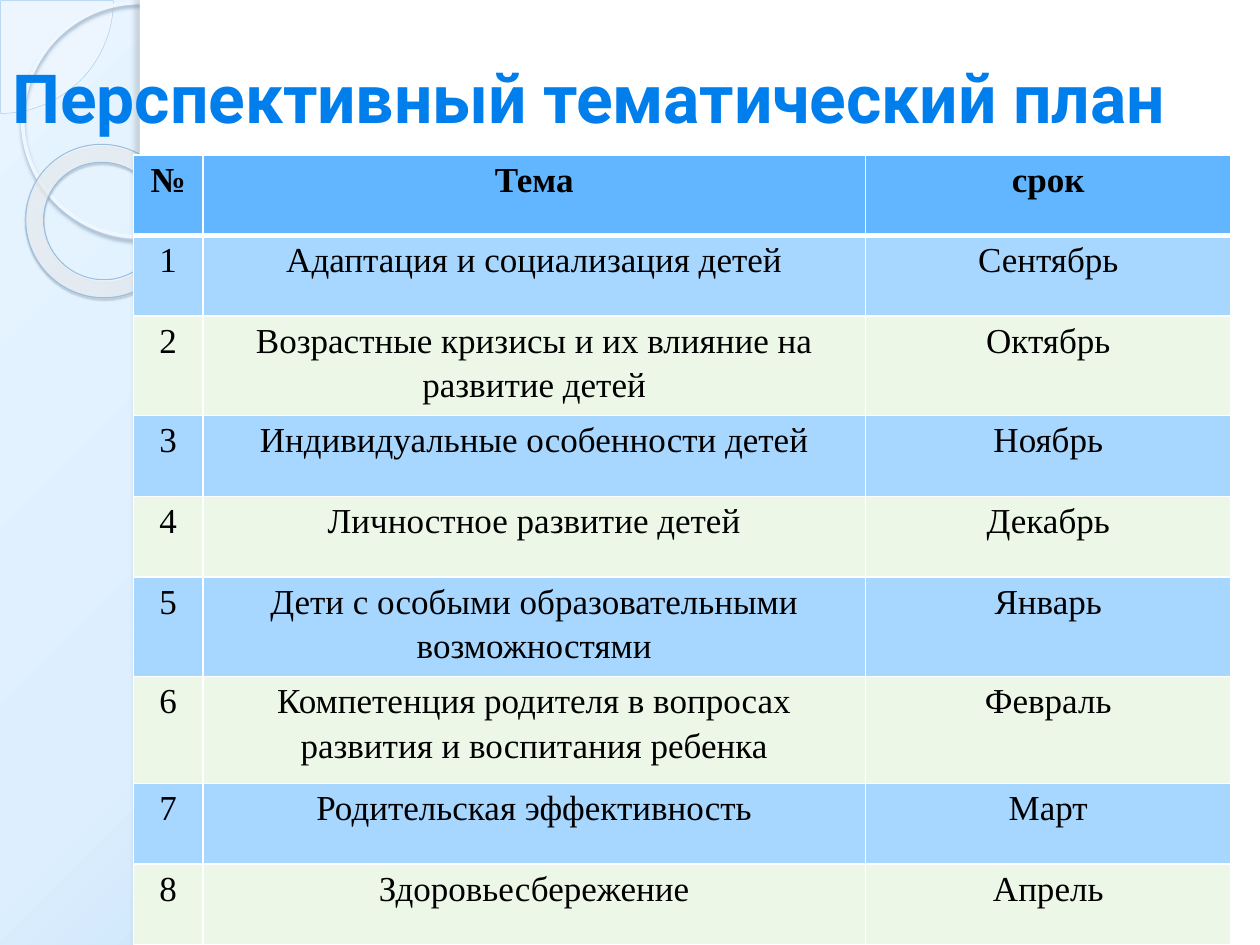
from lxml import etree
from pptx import Presentation
from pptx.dml.color import RGBColor
from pptx.enum import shapes, text
from pptx.oxml import parse_xml
from pptx.oxml.ns import nsdecls, qn
from pptx.util import Inches, Pt

rgb = RGBColor.from_string
WHITE = "FFFFFF"


def radial_gradient(element, stops, focus):
    """Rewrite the element's gradient: stops are (position, colour, opacity), all in percent."""
    stop_xml = "".join(
        f'<a:gs pos="{pos * 1000}"><a:srgbClr val="{color}">'
        f'<a:alpha val="{opacity * 1000}"/></a:srgbClr></a:gs>'
        for pos, color, opacity in stops)
    sides = " ".join(f'{side}="{value * 1000}"' for side, value in zip("ltrb", focus))
    old = element.xpath(".//a:gradFill")[0]
    old.getparent().replace(old, parse_xml(
        f'<a:gradFill {nsdecls("a")} rotWithShape="1"><a:gsLst>{stop_xml}</a:gsLst>'
        f'<a:path path="circle"><a:fillToRect {sides}/></a:path></a:gradFill>'))


def cast_shadow(shape, color, opacity, blur, distance, angle):
    shape.shadow.inherit = False
    effects = shape.element.spPr.find(qn("a:effectLst"))
    effects.append(parse_xml(
        f'<a:outerShdw {nsdecls("a")} blurRad="{Pt(blur)}" dist="{Pt(distance)}" '
        f'dir="{angle * 60000}" algn="tl" rotWithShape="0"><a:srgbClr val="{color}">'
        f'<a:alpha val="{opacity * 1000}"/></a:srgbClr></a:outerShdw>'))


prs = Presentation()
prs.slide_width, prs.slide_height = Inches(10), Inches(7.5)
slide = prs.slides.add_slide(prs.slide_layouts[6])
slide.background.fill.gradient()
radial_gradient(slide.element,
                [(0, "E8F4FF", 100), (40, "DDEFFF", 100), (100, "85B8E4", 100)],
                (-24, -20, 124, 120))

# Decorated left margin
kind = shapes.MSO_SHAPE
corner = slide.shapes.add_shape(kind.PIE, Inches(-0.89), Inches(-0.89), Inches(1.79), Inches(1.79))
corner.adjustments[0] = 0
corner.adjustments[1] = 54.021
corner.fill.solid()
corner.fill.fore_color.rgb = rgb("F8FCFF")
corner_color = corner.element.spPr.xpath("a:solidFill/a:srgbClr")[0]
etree.SubElement(corner_color, qn("a:alpha")).set("val", "33000")
corner.line.color.rgb = rgb("A6CBEC")
corner.line.width = Pt(0.25)
corner.shadow.inherit = False

ring = slide.shapes.add_shape(kind.OVAL, Inches(0.18), Inches(0.02), Inches(1.86), Inches(1.86))
ring.fill.background()
ring.line.color.rgb = rgb("EEF7FF")
ring.line.width = Pt(2.15)
cast_shadow(ring, "97AFC4", 85, 2, 2, 90)

donut = slide.shapes.add_shape(kind.DONUT, Inches(0.2), Inches(1.15), Inches(1.23), Inches(1.21))
donut.rotation = 38.6
donut.adjustments[0] = 0.118
donut.fill.gradient()
radial_gradient(donut.element,
                [(0, "F9FCFF", 70), (70, "FDFEFF", 55), (100, "9FD2FF", 60)],
                (-408, -50, 508, 150))
donut.line.color.rgb = rgb("98BEE0")
donut.line.width = Pt(0.58)
cast_shadow(donut, "475765", 35, 1, 1.2, 75)

# White page and its shaded left edge
for width in (8.89, 0.08):
    page = slide.shapes.add_shape(kind.RECTANGLE, Inches(1.11), 0, Inches(width), Inches(7.5))
    page.fill.solid()
    page.fill.fore_color.rgb = rgb(WHITE)
    page.line.fill.background()
    page.shadow.inherit = False
cast_shadow(page, "697580", 25, 3, 3, 180)

title = slide.shapes.add_textbox(0, Inches(0.3), Inches(9.77), Inches(0.93)).text_frame
title.word_wrap = True
title.vertical_anchor = text.MSO_ANCHOR.MIDDLE
title.text = "Перспективный тематический план"
title_font = title.paragraphs[0].runs[0].font
title_font.name, title_font.size, title_font.bold = "Roboto", Pt(38.7), True
title_font.color.rgb = rgb("007EEB")

# Plan of topics by month
topics = [
    ("Адаптация и социализация детей", "Сентябрь"),
    ("Возрастные кризисы и их влияние на развитие детей", "Октябрь"),
    ("Индивидуальные особенности детей", "Ноябрь"),
    ("Личностное развитие детей", "Декабрь"),
    ("Дети с особыми образовательными возможностями", "Январь"),
    ("Компетенция родителя в вопросах развития и воспитания ребенка", "Февраль"),
    ("Родительская эффективность", "Март"),
    ("Здоровьесбережение", "Апрель"),
]
plan_rows = [("№", "Тема", "срок")]
plan_rows += [(str(number), *topic) for number, topic in enumerate(topics, 1)]
row_heights = [0.64, 0.64, 0.79, 0.64, 0.64, 0.79, 0.85, 0.64, 0.64]

plan = slide.shapes.add_table(len(plan_rows), 3, Inches(1.06), Inches(1.23),
                              Inches(8.71), Inches(6.27)).table
for column, width in zip(plan.columns, (0.55, 5.26, 2.9)):
    column.width = Inches(width)

for r, (values, height) in enumerate(zip(plan_rows, row_heights)):
    plan.rows[r].height = Inches(height)
    row_color = "61B6FF" if r == 0 else ("ECF7E8", "A7D6FF")[r % 2]
    borders = {"L": 1, "R": 1, "T": 3 if r == 1 else 1, "B": 3 if r == 0 else 1}
    for c, value in enumerate(values):
        cell = plan.cell(r, c)
        cell.margin_left = cell.margin_right = Inches(0.07)
        cell.margin_top = cell.margin_bottom = 0
        cell_props = cell._tc.get_or_add_tcPr()
        for side, width in borders.items():
            cell_props.append(parse_xml(
                f'<a:ln{side} {nsdecls("a")} w="{Pt(width)}"><a:solidFill>'
                f'<a:srgbClr val="{WHITE}"/></a:solidFill></a:ln{side}>'))
        cell.fill.solid()
        cell.fill.fore_color.rgb = rgb(row_color)
        cell.text_frame.text = value
        paragraph = cell.text_frame.paragraphs[0]
        paragraph.alignment = text.PP_ALIGN.CENTER
        paragraph.line_spacing = 1.15
        font = paragraph.runs[0].font
        font.name, font.size, font.bold = "Times New Roman", Pt(20), r == 0
        font.color.rgb = rgb("000000")

prs.save("out.pptx")
